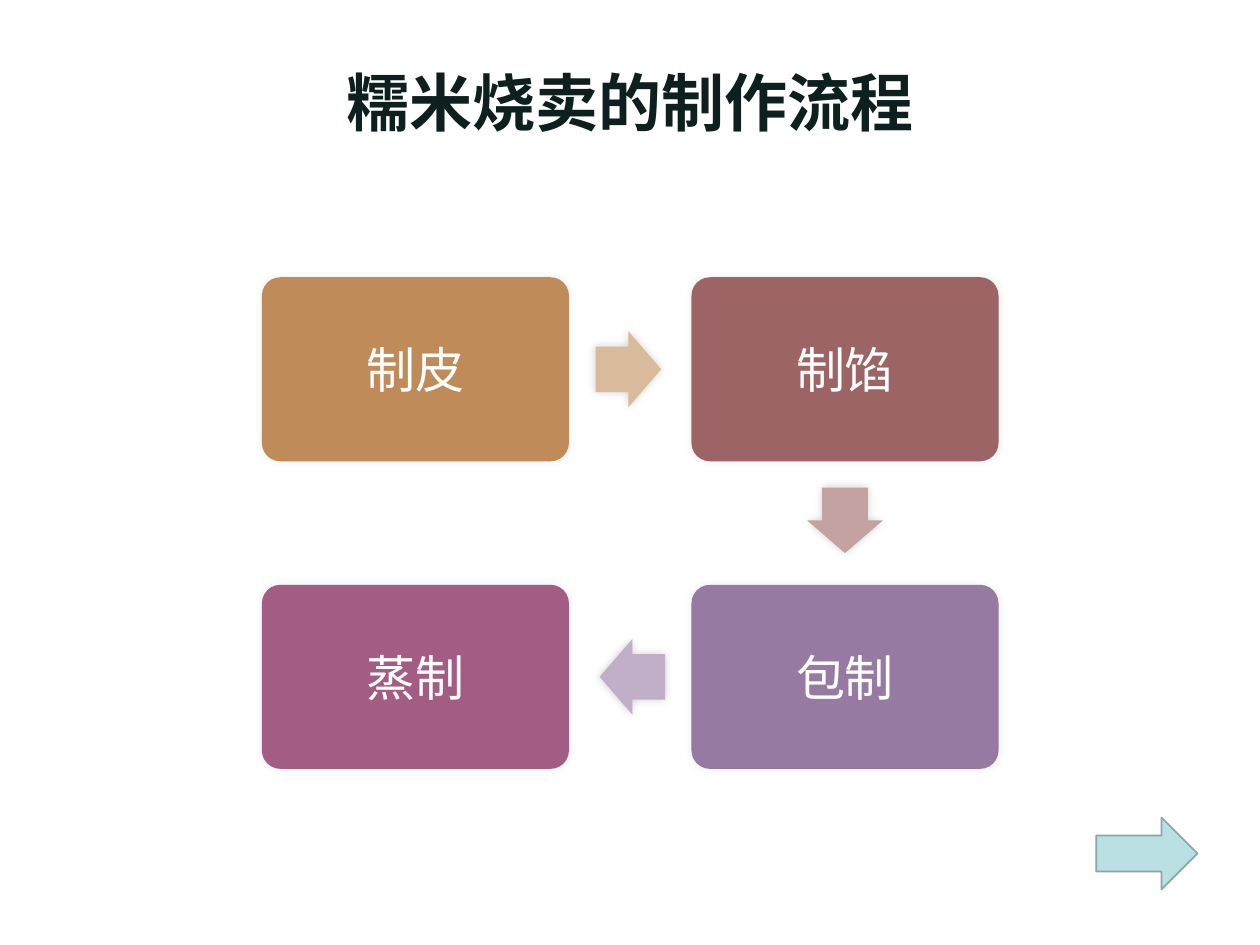
from lxml import etree
from pptx import Presentation
from pptx.dml.color import RGBColor
from pptx.enum.shapes import MSO_SHAPE
from pptx.enum.text import MSO_ANCHOR, PP_ALIGN
from pptx.oxml.ns import qn
from pptx.util import Cm, Pt

ROUNDED = MSO_SHAPE.ROUNDED_RECTANGLE
RIGHT, DOWN, LEFT = MSO_SHAPE.RIGHT_ARROW, MSO_SHAPE.DOWN_ARROW, MSO_SHAPE.LEFT_ARROW
MIDDLE = MSO_ANCHOR.MIDDLE
CENTER = PP_ALIGN.CENTER

CJK_FONT = "Noto Sans CJK SC"
STEP_FONT = "TeX Gyre Adventor"

GRID_LEFT, GRID_TOP = 5.28, 5.59
COL_PITCH, ROW_PITCH = 8.66, 6.2
BOX_W, BOX_H = 6.19, 3.71
ARROW_LENGTH, ARROW_BREADTH = 1.32, 1.53

# Text, column, row, colour
STEPS = [
    ("制皮", 0, 0, "BF8C59"),
    ("制馅", 1, 0, "9C6464"),
    ("包制", 1, 1, "967AA2"),
    ("蒸制", 0, 1, "A35D85"),
]
# Shape, centre x, centre y, colour
ARROWS = [
    (RIGHT, 12.67, GRID_TOP + BOX_H / 2, "D9BA9B"),
    (DOWN, GRID_LEFT + COL_PITCH + BOX_W / 2, 10.49, "C4A2A2"),
    (LEFT, 12.75, GRID_TOP + ROW_PITCH + BOX_H / 2, "C0AFC7"),
]


def rgb(value):
    return RGBColor.from_string(value)


def add_glow_shadow(sp, opacity):
    """Add a soft black shadow with no offset; opacity is in percent."""
    effects = sp._element.spPr.find(qn("a:effectLst"))
    shadow = etree.SubElement(effects, qn("a:outerShdw"), blurRad=str(Pt(5)),
                              dist="0", dir="0", rotWithShape="0")
    color = etree.SubElement(shadow, qn("a:srgbClr"), val="000000")
    etree.SubElement(color, qn("a:alpha"), val=str(opacity * 1000))


def add_filled_shape(slide, kind, x, y, w, h, fill):
    sp = slide.shapes.add_shape(kind, Cm(x), Cm(y), Cm(w), Cm(h))
    sp.shadow.inherit = False
    sp.fill.solid()
    sp.fill.fore_color.rgb = rgb(fill)
    sp.line.fill.background()
    return sp


def set_text(sp, text, size, font, color, bold=False):
    tf = sp.text_frame
    tf.word_wrap = True
    tf.vertical_anchor = MIDDLE
    p = tf.paragraphs[0]
    p.text = text
    p.alignment = CENTER
    p.font.size = Pt(size)
    p.font.bold = bold
    p.font.name = font
    p.font.color.rgb = rgb(color)
    latin = p._p.pPr.find(qn("a:defRPr")).find(qn("a:latin"))
    east_asian = etree.Element(qn("a:ea"), typeface=CJK_FONT)
    latin.addnext(east_asian)


def add_title(slide, text):
    sp = slide.shapes.add_textbox(Cm(1.27), Cm(0.76), Cm(22.86), Cm(2.57))
    set_text(sp, text, 36, CJK_FONT, "0E1F1F", bold=True)


def add_step(slide, text, col, row, fill):
    sp = add_filled_shape(slide, ROUNDED, GRID_LEFT + col * COL_PITCH,
                          GRID_TOP + row * ROW_PITCH, BOX_W, BOX_H, fill)
    sp.adjustments[0] = 0.1
    add_glow_shadow(sp, 8)
    set_text(sp, text, 28, STEP_FONT, "FFFFFF")


def add_step_arrow(slide, kind, center_x, center_y, fill):
    w, h = ARROW_LENGTH, ARROW_BREADTH
    if kind == DOWN:
        w, h = h, w
    sp = add_filled_shape(slide, kind, center_x - w / 2, center_y - h / 2, w, h, fill)
    sp.adjustments[0] = 0.6
    sp.adjustments[1] = 0.5
    add_glow_shadow(sp, 18)


def add_next_arrow(slide):
    sp = add_filled_shape(slide, RIGHT, 22.1, 16.48, 2.04, 1.45, "BBE0E3")
    sp.line.color.rgb = rgb("8AA6A8")
    sp.line.width = Pt(1)


def main():
    prs = Presentation()
    prs.slide_width, prs.slide_height = Cm(25.4), Cm(19.05)
    slide = prs.slides.add_slide(prs.slide_layouts[6])
    add_title(slide, "糯米烧卖的制作流程")
    add_next_arrow(slide)
    for step in STEPS:
        add_step(slide, *step)
    for arrow in ARROWS:
        add_step_arrow(slide, *arrow)
    prs.save("out.pptx")


if __name__ == "__main__":
    main()
